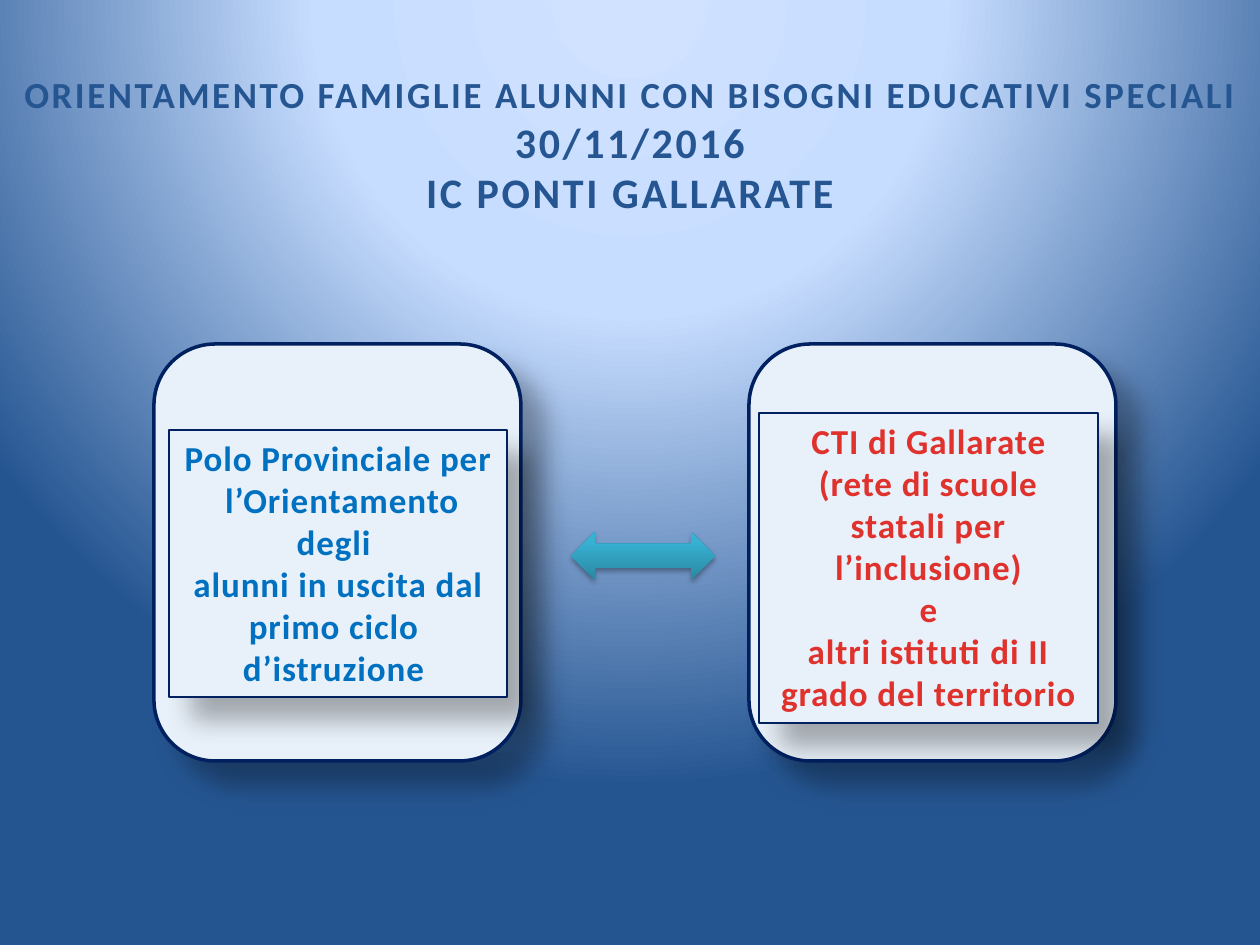
from lxml import etree
from pptx import Presentation
from pptx.dml.color import RGBColor
from pptx.enum.shapes import MSO_SHAPE
from pptx.enum.text import MSO_ANCHOR, MSO_AUTO_SIZE, PP_ALIGN
from pptx.oxml import parse_xml
from pptx.oxml.ns import nsdecls, qn
from pptx.util import Pt

ROUND, RECT = MSO_SHAPE.ROUNDED_RECTANGLE, MSO_SHAPE.RECTANGLE
ARROW = MSO_SHAPE.LEFT_RIGHT_ARROW
CENTER, TOP, GROW = PP_ALIGN.CENTER, MSO_ANCHOR.TOP, MSO_AUTO_SIZE.SHAPE_TO_FIT_TEXT
FONT = "Calibri"
SCALE = 914400 / 126  # EMU per px
PALE, NAVY = "E8F0F9", "002060"
DEEP = (30, 15, 18, 45)  # alpha %, blur pt, distance pt, angle
SOFT = (35, 3.1, 1.8, 90)

# Content
TITLE = [
    ("ORIENTAMENTO FAMIGLIE ALUNNI CON BISOGNI EDUCATIVI SPECIALI", 21),
    ("30/11/2016", 24),
    ("IC PONTI GALLARATE", 24),
]
CARDS = [
    {"left": 154, "label": (169, 430, 338, 267), "color": "0070C0",
     "lines": ["Polo Provinciale per", " l’Orientamento degli ",
               "alunni in uscita dal", "primo ciclo ", "d’istruzione "]},
    {"left": 749, "label": (759, 413, 339, 310), "color": "E0322D",
     "lines": ["CTI di Gallarate",
               "(rete di scuole statali per l’inclusione)", "e",
               "altri istituti di II grado del territorio"]},
]
CARD_TOP, CARD_W, CARD_H = 344, 367, 417
BACK = [(0, "D0E2FF"), (40, "C7DDFF"), (100, "255591")]
TEAL = [(0, "2A88A2"), (80, "37B1D2"), (100, "34B4D6")]


def px(*vals):
    return [round(v * SCALE) for v in vals]


def rgb(code):
    return RGBColor.from_string(code)


def grad(stops, kind):
    marks = "".join(f'<a:gs pos="{pos * 1000}"><a:srgbClr val="{code}"/></a:gs>'
                    for pos, code in stops)
    return (f'<a:gradFill {nsdecls("a")} rotWithShape="1">'
            f"<a:gsLst>{marks}</a:gsLst>{kind}</a:gradFill>")


def shade(shape, alpha, blur, dist, angle):
    shape.shadow.inherit = False
    effects = shape._element.spPr.find(qn("a:effectLst"))
    cast = etree.SubElement(effects, qn("a:outerShdw"), blurRad=str(Pt(blur)),
                            dist=str(Pt(dist)), dir=str(angle * 60000),
                            algn="tl", rotWithShape="0")
    tint = etree.SubElement(cast, qn("a:srgbClr"), val="000000")
    etree.SubElement(tint, qn("a:alpha"), val=str(alpha * 1000))


def panel(shapes, form, box, width):
    shape = shapes.add_shape(form, *px(*box))
    shape.fill.solid()
    shape.fill.fore_color.rgb = rgb(PALE)
    shape.line.color.rgb = rgb(NAVY)
    shape.line.width = Pt(width)
    shade(shape, *DEEP)
    return shape


def write(shape, lines, color, gap):
    frame = shape.text_frame
    frame.word_wrap = True
    frame.auto_size = GROW
    frame.vertical_anchor = TOP
    for i, (text, size) in enumerate(lines):
        para = frame.paragraphs[0] if i == 0 else frame.add_paragraph()
        para.alignment = CENTER
        run = para.add_run()
        run.text = text
        font = para.font
        font.name, font.size, font.bold = FONT, Pt(size), True
        font.color.rgb = rgb(color)
        run._r.get_or_add_rPr().set("spc", str(gap))


def main():
    deck = Presentation()
    deck.slide_width, deck.slide_height = px(1260, 945)
    slide = deck.slides.add_slide(deck.slide_layouts[6])
    shapes = slide.shapes

    # Background glow
    glow = ('<a:path path="circle"><a:fillToRect l="50000" t="-80000" '
            'r="50000" b="180000"/></a:path>')
    slide._element.cSld.insert(0, parse_xml(
        f'<p:bg {nsdecls("p", "a")}><p:bgPr>{grad(BACK, glow)}'
        "<a:effectLst/></p:bgPr></p:bg>"))

    # Link between the cards
    arrow = shapes.add_shape(ARROW, *px(571, 532, 144, 48))
    arrow.line.fill.background()
    arrow._element.spPr.find(qn("a:prstGeom")).addnext(
        parse_xml(grad(TEAL, '<a:lin ang="16200000" scaled="0"/>')))
    shade(arrow, *SOFT)

    # Cards with their labels
    for card in CARDS:
        group = shapes.add_group_shape().shapes
        panel(group, ROUND, (card["left"], CARD_TOP, CARD_W, CARD_H), 2)
        label = panel(group, RECT, card["label"], 0.75)
        write(label, [(line, 20) for line in card["lines"]], card["color"], 50)

    # Title
    write(shapes.add_textbox(*px(0, 66, 1260, 159)), TITLE, "255692", 150)

    deck.save("out.pptx")


if __name__ == "__main__":
    main()
